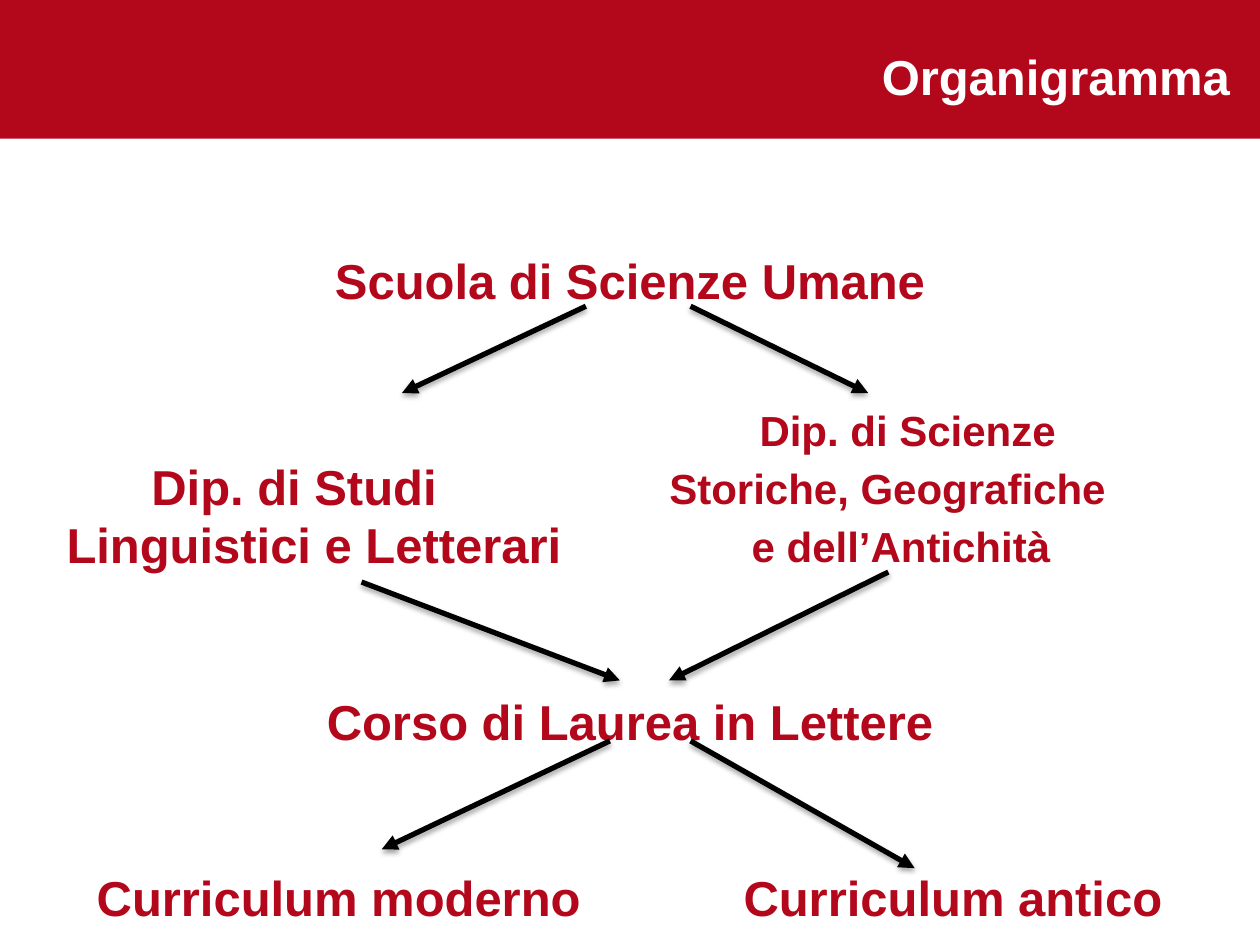
from dataclasses import dataclass
from typing import NamedTuple

from lxml import etree
from pptx import Presentation
from pptx.dml.color import RGBColor
from pptx.enum import shapes, text
from pptx.oxml import ns
from pptx.util import Pt

MID, LEFT, RIGHT = text.PP_ALIGN.CENTER, text.PP_ALIGN.LEFT, text.PP_ALIGN.RIGHT


@dataclass(frozen=True)
class Theme:
    red: RGBColor = RGBColor(0xB3, 0x07, 0x1B)
    white: RGBColor = RGBColor(255, 255, 255)
    black: RGBColor = RGBColor(0, 0, 0)
    font: str = "Arial"
    big: float = 28
    small: float = 24
    pitch: float = 33
    stroke: float = 3


class Line(NamedTuple):
    words: str
    indent: float = 0


class Label(NamedTuple):
    left: float
    top: float
    width: float
    size: float
    align: text.PP_ALIGN
    lines: tuple[Line, ...]


class Arrow(NamedTuple):
    x1: float
    y1: float
    x2: float
    y2: float


THEME = Theme()
HEAD = 79.2

LABELS = (
    Label(0, 143.8, 720, THEME.big, MID, (Line("Scuola di Scienze Umane"),)),
    Label(38, 261.5, 300, THEME.big, LEFT,
          (Line("Dip. di Studi", 48.5), Line("Linguistici e Letterari"))),
    Label(382.5, 227, 290, THEME.small, LEFT,
          (Line("Dip. di Scienze", 51.5), Line("Storiche, Geografiche"),
           Line("e dell’Antichità", 47))),
    Label(0, 395.8, 720, THEME.big, MID, (Line("Corso di Laurea in Lettere"),)),
    Label(43.5, 496.3, 300, THEME.big, MID, (Line("Curriculum moderno"),)),
    Label(394.5, 496.3, 300, THEME.big, MID, (Line("Curriculum antico"),)),
)

ARROWS = (
    Arrow(334.8, 175, 229.7, 224.6),
    Arrow(394.6, 175, 496.1, 224.6),
    Arrow(206.6, 332.6, 354.2, 388.8),
    Arrow(507.6, 326.9, 382.3, 388.8),
    Arrow(348.5, 423.4, 218.2, 485.3),
    Arrow(394.6, 423.4, 522.7, 496.1),
)


def style(item: object, values: dict) -> None:
    for name, value in values.items():
        setattr(item, name, value)


def write(para, words: str, size: float, color: RGBColor) -> None:
    run = para.add_run()
    run.text = words
    style(run.font, {"name": THEME.font, "size": Pt(size), "bold": True})
    run.font.color.rgb = color


def header(slide) -> None:
    bar = slide.shapes.add_shape(shapes.MSO_SHAPE.RECTANGLE,
                                 Pt(-8), Pt(0), Pt(728), Pt(HEAD))
    bar.shadow.inherit = False
    bar.fill.solid()
    bar.fill.fore_color.rgb = THEME.red
    bar.line.fill.background()
    frame = slide.shapes.add_textbox(Pt(326), Pt(0), Pt(394), Pt(HEAD)).text_frame
    style(frame, {"word_wrap": True, "vertical_anchor": text.MSO_ANCHOR.MIDDLE,
                  "margin_top": Pt(11.5), "margin_right": Pt(17.3),
                  "margin_bottom": Pt(3.6)})
    para = frame.paragraphs[0]
    para.alignment = RIGHT
    write(para, "Organigramma", THEME.big, THEME.white)


def label(slide, spec: Label) -> None:
    frame = slide.shapes.add_textbox(
        Pt(spec.left), Pt(spec.top), Pt(spec.width),
        Pt(THEME.pitch * len(spec.lines))).text_frame
    style(frame, {"word_wrap": True, "margin_left": 0, "margin_right": 0,
                  "margin_top": 0, "margin_bottom": 0})
    for row, line in enumerate(spec.lines):
        para = frame.add_paragraph() if row else frame.paragraphs[0]
        style(para, {"alignment": spec.align, "line_spacing": Pt(THEME.pitch)})
        if line.indent:
            para._p.get_or_add_pPr().set("marL", str(Pt(line.indent)))
        write(para, line.words, spec.size, THEME.red)


def arrow(slide, ends: Arrow) -> None:
    """Draw a line with a triangle at its end and a soft shadow below."""
    link = slide.shapes.add_connector(shapes.MSO_CONNECTOR.STRAIGHT,
                                      *(Pt(end) for end in ends))
    link.line.color.rgb = THEME.black
    link.line.width = Pt(THEME.stroke)
    etree.SubElement(link.line._get_or_add_ln(), ns.qn("a:tailEnd"), type="triangle")
    glow = etree.SubElement(link._element.spPr, ns.qn("a:effectLst"))
    cast = etree.SubElement(glow, ns.qn("a:outerShdw"), blurRad=str(Pt(3.1)),
                            dist=str(Pt(1.8)), dir="5400000", rotWithShape="0")
    tint = etree.SubElement(cast, ns.qn("a:srgbClr"), val=str(THEME.black))
    etree.SubElement(tint, ns.qn("a:alpha"), val="35000")


def main() -> None:
    deck = Presentation()
    style(deck, {"slide_width": Pt(720), "slide_height": Pt(540)})
    slide = deck.slides.add_slide(deck.slide_layouts[6])
    header(slide)
    for item in LABELS:
        label(slide, item)
    for ends in ARROWS:
        arrow(slide, ends)
    deck.save("out.pptx")


if __name__ == "__main__":
    main()
